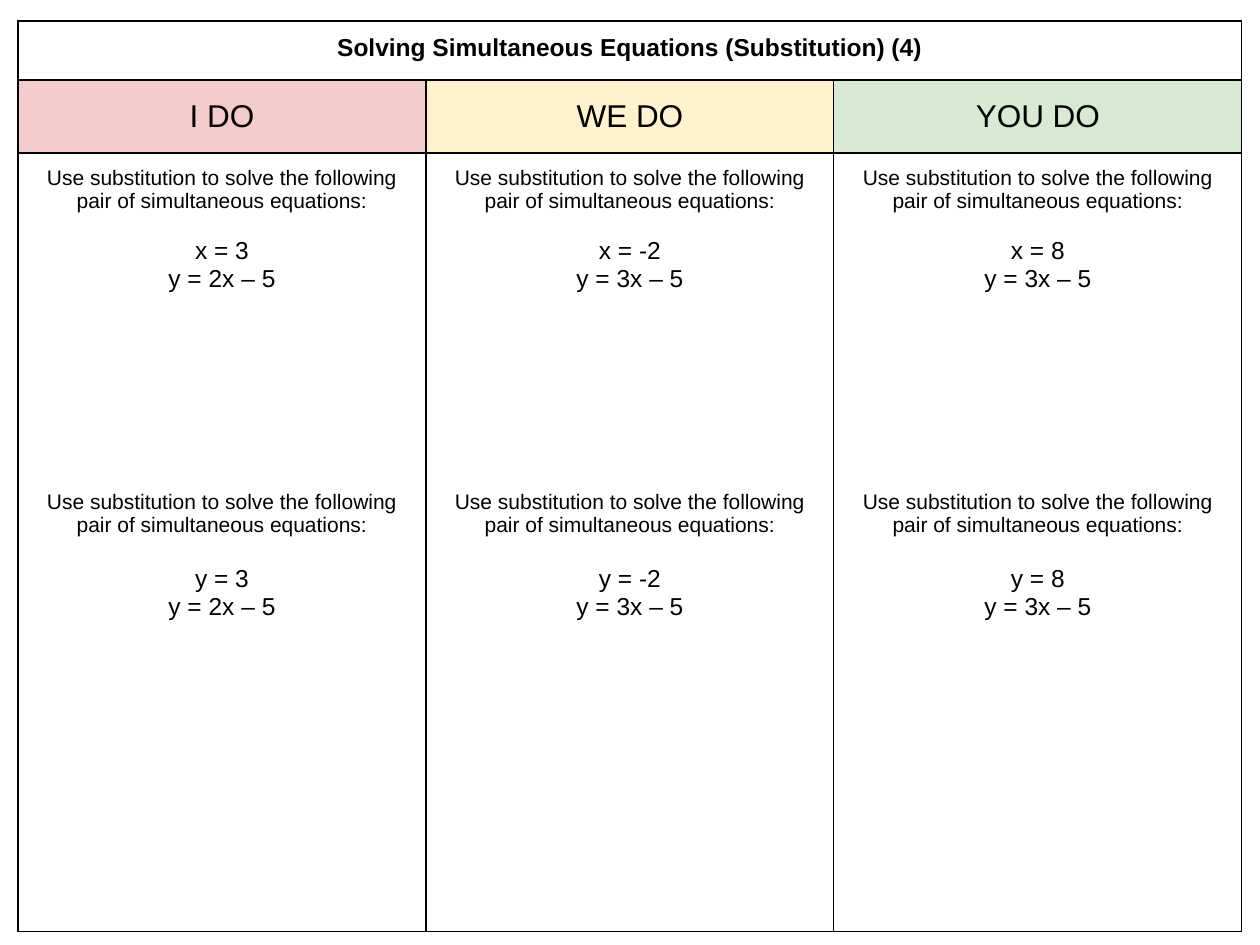
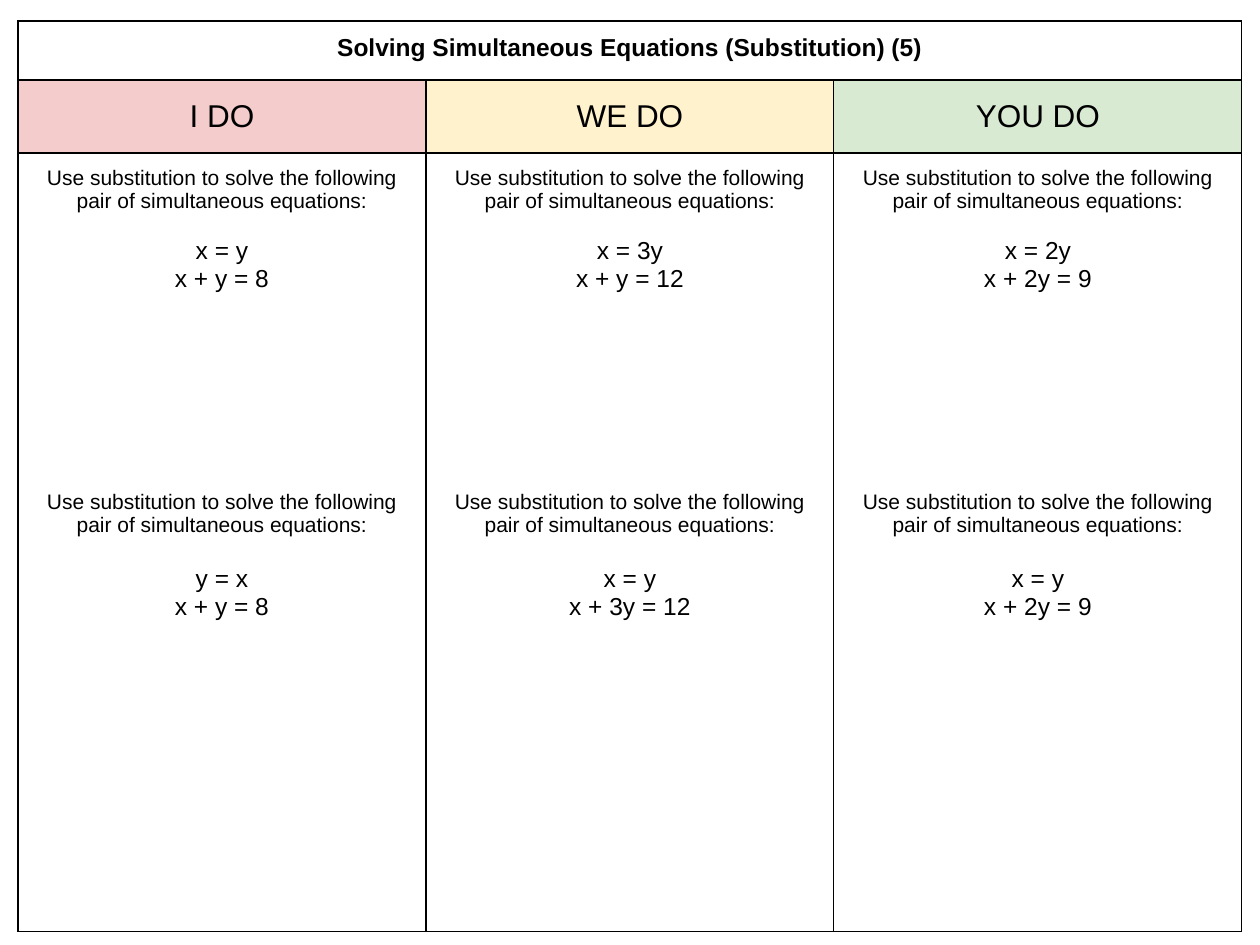
from lxml.etree import SubElement
from pptx import Presentation
from pptx.dml.color import RGBColor
from pptx.enum.text import MSO_ANCHOR as ANCHOR, PP_ALIGN as ALIGN
from pptx.oxml import parse_xml
from pptx.oxml.ns import nsdecls, qn
from pptx.util import Pt

# Content: per slide a title and, per column, two pairs of equations
TITLE = "Solving Simultaneous Equations (Substitution) ({})"
PROMPT = "Use substitution to solve the following pair of simultaneous equations:"
LESSONS = [
    (4, [
        (("x = 3", "y = 2x – 5"), ("y = 3", "y = 2x – 5")),
        (("x = -2", "y = 3x – 5"), ("y = -2", "y = 3x – 5")),
        (("x = 8", "y = 3x – 5"), ("y = 8", "y = 3x – 5")),
    ]),
    (5, [
        (("x = y", "x + y = 8"), ("y = x", "x + y = 8")),
        (("x = 3y", "x + y = 12"), ("x = y", "x + 3y = 12")),
        (("x = 2y", "x + 2y = 9"), ("x = y", "x + 2y = 9")),
    ]),
]

# Shared look
BLACK = RGBColor(0x00, 0x00, 0x00)
RED = RGBColor(0xF4, 0xCC, 0xCC)
YELLOW = RGBColor(0xFF, 0xF2, 0xCC)
GREEN = RGBColor(0xD9, 0xEA, 0xD3)
STAGES = [("I DO", RED), ("WE DO", YELLOW), ("YOU DO", GREEN)]
FONT = "Arial"
WORK_SPACE = 113           # points left free for working between the questions
PROMPT_GAPS = (14, 16)     # points between prompt and equations, per question

# Layout in px
PX = 914400 // 126
SLIDE_W, SLIDE_H = 1260, 945
LEFT, TOP = 18, 21
COL_W = 408
ROWS = (59, 73, 779)
INSET = 13


def add_text(cell, text, size, bold=False, before=0):
    tf = cell.text_frame
    p = tf.paragraphs[0]
    if p.runs:
        p = tf.add_paragraph()
    p.alignment = ALIGN.CENTER
    p.space_before = Pt(before)
    r = p.add_run()
    r.text = text
    r.font.name, r.font.size, r.font.bold = FONT, Pt(size), bold
    r.font.color.rgb = BLACK


def style_cell(cell):
    cell.margin_left = cell.margin_right = INSET * PX
    cell.margin_top = cell.margin_bottom = INSET * PX
    cell.fill.background()
    tc_pr = cell._tc.get_or_add_tcPr()
    for i, side in enumerate("LRTB"):
        ln = parse_xml(f'<a:ln{side} {nsdecls("a")} w="{Pt(0.75)}"/>')
        fill = SubElement(ln, qn("a:solidFill"))
        SubElement(fill, qn("a:srgbClr"), val=str(BLACK))
        tc_pr.insert(i, ln)


def add_questions(cell, questions):
    for i, (equations, gap) in enumerate(zip(questions, PROMPT_GAPS)):
        add_text(cell, PROMPT, 12, before=i * WORK_SPACE)
        for j, equation in enumerate(equations):
            add_text(cell, equation, 14, before=0 if j else gap)


def add_lesson(prs, number, columns):
    s = prs.slides.add_slide(prs.slide_layouts[6])
    n = len(STAGES)
    table = s.shapes.add_table(len(ROWS), n, LEFT * PX, TOP * PX,
                               n * COL_W * PX, sum(ROWS) * PX).table
    table.first_row = table.horz_banding = False
    for col in table.columns:
        col.width = COL_W * PX
    for row, height in zip(table.rows, ROWS):
        row.height = height * PX
    for cell in table.iter_cells():
        style_cell(cell)

    # Title across all columns
    title = table.cell(0, 0)
    title.merge(table.cell(0, n - 1))
    add_text(title, TITLE.format(number), 14, bold=True)

    # Coloured stage heads and the questions below them
    for c, ((stage, color), questions) in enumerate(zip(STAGES, columns)):
        head = table.cell(1, c)
        head.fill.solid()
        head.fill.fore_color.rgb = color
        head.vertical_anchor = ANCHOR.MIDDLE
        add_text(head, stage, 18)
        add_questions(table.cell(2, c), questions)


def main():
    prs = Presentation()
    prs.slide_width, prs.slide_height = 10 * 914400, SLIDE_H * 914400 // 126
    for number, columns in LESSONS:
        add_lesson(prs, number, columns)
    prs.save("out.pptx")


if __name__ == "__main__":
    main()
